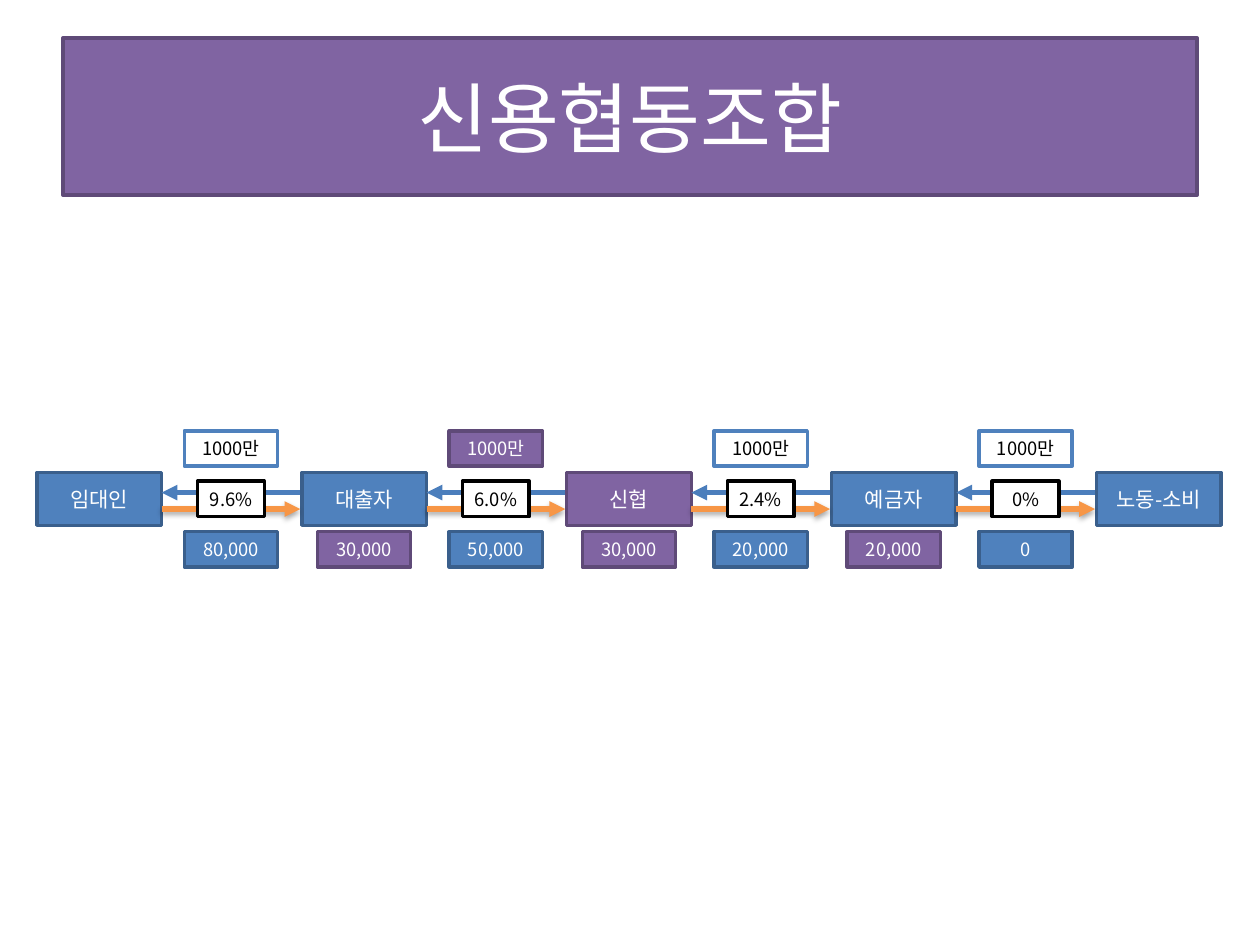
from lxml.etree import SubElement
from pptx import Presentation
from pptx.dml.color import RGBColor as RGB
from pptx.enum.shapes import MSO_CONNECTOR as CONN, MSO_SHAPE as SHAPE
from pptx.enum.text import MSO_ANCHOR as ANCHOR, MSO_AUTO_SIZE as AUTO, PP_ALIGN as ALIGN
from pptx.oxml.ns import qn
from pptx.util import Pt

FONT = "Noto Sans CJK KR"
COLORS = {
    "blue": "4F81BD", "blue_edge": "3A5F8C", "blue_arrow": "4B7EBC",
    "purple": "8064A2", "purple_edge": "5F4A78",
    "orange": "F79646", "white": "FFFFFF", "black": "000000",
}
STYLES = {
    "blue": ("blue", "blue_edge", "white"),
    "purple": ("purple", "purple_edge", "white"),
    "outline": ("white", "blue", "black"),
    "rate": ("white", "black", "black"),
}
PARTIES = [("임대인", "blue"), ("대출자", "blue"), ("신협", "purple"),
           ("예금자", "blue"), ("노동-소비", "blue")]
LOANS = [("1000만", "outline", "9.6%", "80,000"),
         ("1000만", "purple", "6.0%", "50,000"),
         ("1000만", "outline", "2.4%", "20,000"),
         ("1000만", "outline", "0%", "0")]
MARGINS = [None, "30,000", "30,000", "20,000", None]
PITCH, PARTY_W, TAG_W, TAG_H, RATE_W = 151.35, 71.3, 53.3, 20.2, 38.2
TAG_STEP = 28.8


def rgb(name):
    return RGB.from_string(COLORS[name])


def format_box(sp, text, style, size):
    fill, edge, ink = STYLES[style]
    sp.fill.solid()
    sp.fill.fore_color.rgb = rgb(fill)
    sp.line.color.rgb = rgb(edge)
    sp.line.width = Pt(2)
    tf = sp.text_frame
    values = {"word_wrap": True, "auto_size": AUTO.NONE,
              "vertical_anchor": ANCHOR.MIDDLE, "margin_left": 0,
              "margin_right": 0, "margin_top": 0, "margin_bottom": 0}
    for key, value in values.items():
        setattr(tf, key, value)
    p = tf.paragraphs[0]
    p.alignment = ALIGN.CENTER
    r = p.add_run()
    r.text = text
    for key, value in {"name": FONT, "size": Pt(size)}.items():
        setattr(r.font, key, value)
    r.font.color.rgb = rgb(ink)
    SubElement(r.font._element, qn("a:ea"), typeface=FONT)


def add_box(s, x, y, w, h, text, style, size=10.5):
    sp = s.shapes.add_shape(SHAPE.RECTANGLE, Pt(x), Pt(y), Pt(w), Pt(h))
    sp.shadow.inherit = False
    format_box(sp, text, style, size)


def add_arrow(s, x1, x2, y, color, shadow=False):
    line = s.shapes.add_connector(CONN.STRAIGHT, Pt(x1), Pt(y), Pt(x2), Pt(y))
    line.line.color.rgb = rgb(color)
    line.line.width = Pt(3)
    SubElement(line.line._get_or_add_ln(), qn("a:tailEnd"), type="triangle")
    effects = SubElement(line._element.spPr, qn("a:effectLst"))
    if shadow:
        outer = SubElement(effects, qn("a:outerShdw"), blurRad=str(Pt(3.1)),
                           dist=str(Pt(1.8)), dir="5400000", rotWithShape="0")
        ink = SubElement(outer, qn("a:srgbClr"), val=COLORS["black"])
        SubElement(ink, qn("a:alpha"), val="35000")


def add_title(s, x, y, w, h, text):
    sp = s.shapes.title
    box = {"left": Pt(x), "top": Pt(y), "width": Pt(w), "height": Pt(h)}
    for key, value in box.items():
        setattr(sp, key, value)
    format_box(sp, text, "purple", 44)


def add_party(s, x, y, w, h, party, margin):
    name, style = party
    add_box(s, x, y, w, h, name, style, 12)
    if margin:
        add_box(s, x + (w - TAG_W) / 2, y + 33.8, TAG_W, TAG_H, margin, "purple")


def add_loan(s, x, y, w, loan):
    amount, style, rate, interest = loan
    add_arrow(s, x + w, x, y + 35.3, "blue_arrow")
    add_arrow(s, x, x + w, y + 44.7, "orange", shadow=True)
    center = x + w / 2
    tags = [(amount, style, TAG_W), (rate, "rate", RATE_W),
            (interest, "blue", TAG_W)]
    for i, (text, tag_style, tag_w) in enumerate(tags):
        add_box(s, center - tag_w / 2, y + i * TAG_STEP, tag_w, TAG_H,
                text, tag_style)


def add_chain(s, x, y):
    for i, (party, margin) in enumerate(zip(PARTIES, MARGINS)):
        add_party(s, x + i * PITCH, y + 23.8, PARTY_W, 30.2, party, margin)
    for i, loan in enumerate(LOANS):
        add_loan(s, x + i * PITCH + PARTY_W, y, PITCH - PARTY_W - 0.8, loan)


def main():
    prs = Presentation()
    prs.slide_width, prs.slide_height = Pt(720), Pt(540)
    s = prs.slides.add_slide(prs.slide_layouts[5])
    add_title(s, 36, 21.6, 648, 90, "신용협동조합")
    add_chain(s, 21.1, 246.2)
    prs.save("out.pptx")


if __name__ == "__main__":
    main()
